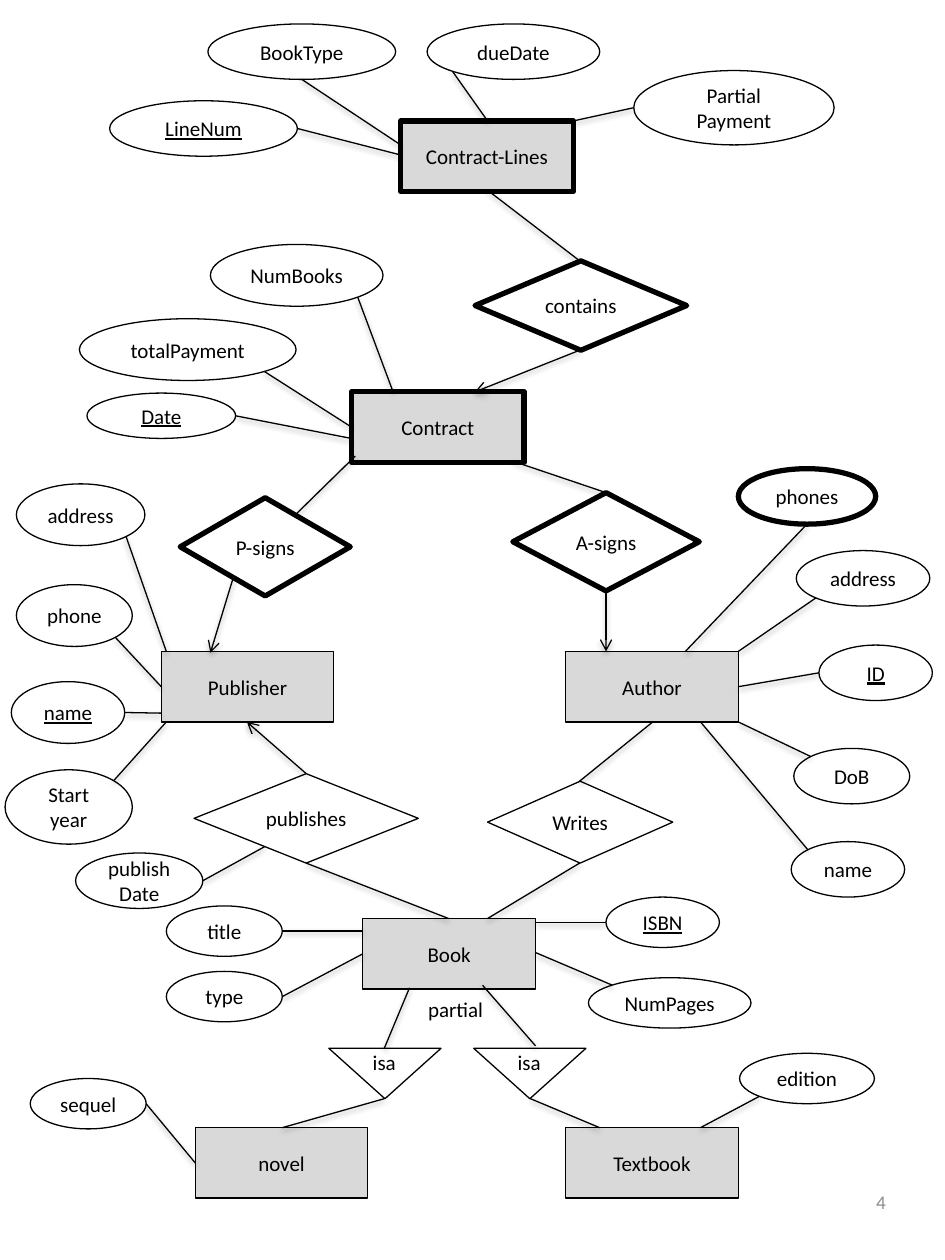
from lxml.etree import SubElement
from pptx import Presentation
from pptx.dml.color import RGBColor
from pptx.enum.shapes import MSO_CONNECTOR, MSO_SHAPE
from pptx.enum.text import MSO_ANCHOR, PP_ALIGN
from pptx.oxml.ns import qn
from pptx.util import Inches, Pt

COLORS = {"ink": "000000", "entity": "D9D9D9", "number": "8C8C8C"}
THIN, THICK = 0.75, 3
ENTITY_WIDTH, ENTITY_HEIGHT = 1.37, 0.56
DIAGONAL = 0.5 ** 1.5
SITES = {
    "left": (0, 0.5),
    "right": (1, 0.5),
    "bottom": (0.5, 1),
    "top left": (0.5 - DIAGONAL, 0.5 - DIAGONAL),
    "top right": (0.5 + DIAGONAL, 0.5 - DIAGONAL),
    "bottom left": (0.5 - DIAGONAL, 0.5 + DIAGONAL),
    "bottom right": (0.5 + DIAGONAL, 0.5 + DIAGONAL),
}
KEYS = {"underline": True}
MULTIVALUED = {"weight": THICK}

ENTITIES = [
    ("Contract-Lines", (3.18, 0.96), THICK, [
        ("BookType", (-1.53, -0.77, 1.49, 0.44), "bottom", (0, 0.19), {}),
        ("dueDate", (0.21, -0.77, 1.37, 0.44), "bottom left", (0.69, 0), {}),
        ("Partial\nPayment", (1.85, -0.4, 1.59, 0.59), "left", (1.37, 0), {}),
        ("LineNum", (-2.31, -0.16, 1.49, 0.44), "right", (0, 0.27), KEYS),
    ]),
    ("Contract", (2.79, 3.11), THICK, [
        ("NumBooks", (-1.12, -1.17, 1.37, 0.49), "bottom right", (0.33, 0), {}),
        ("totalPayment", (-2.16, -0.58, 1.72, 0.49), "bottom right", (0, 0.28), {}),
        ("Date", (-2.1, 0.01, 1.18, 0.36), "right", (0, 0.37), KEYS),
    ]),
    ("Publisher", (1.28, 5.17), THIN, [
        ("address", (-1.15, -1.33, 1.02, 0.49), "bottom right", (0.04, 0), {}),
        ("phone", (-1.15, -0.53, 0.92, 0.49), "bottom right", (0, 0.28), {}),
        ("name", (-1.19, 0.24, 0.9, 0.49), "right", (0, 0.49), KEYS),
        ("Start year", (-1.24, 0.94, 1.01, 0.59), "top right", (0.04, 0.56), {}),
    ]),
    ("Author", (4.49, 5.17), THIN, [
        ("phones", (1.37, -1.45, 1.09, 0.44), "bottom", (0.95, 0), MULTIVALUED),
        ("address", (1.83, -0.8, 1.06, 0.44), "bottom left", (1.37, 0), {}),
        ("ID", (2.01, -0.05, 0.9, 0.44), "left", (1.37, 0.28), KEYS),
        ("DoB", (1.81, 0.77, 0.92, 0.44), "top left", (1.37, 0.56), {}),
        ("name", (1.79, 1.51, 0.9, 0.44), "top left", (1.07, 0.56), {}),
    ]),
    ("Book", (2.88, 7.29), THIN, [
        ("title", (-1.56, -0.1, 0.92, 0.4), "right", (0, 0.1), {}),
        ("type", (-1.56, 0.42, 0.92, 0.4), "right", (0, 0.28), {}),
        ("ISBN", (1.93, -0.17, 0.9, 0.4), "left", (1.37, 0.03), KEYS),
        ("NumPages", (1.79, 0.47, 1.29, 0.4), "top left", (1.37, 0.27), {}),
    ]),
    ("novel", (1.55, 8.95), THIN, [
        ("sequel", (-1.31, -0.39, 0.92, 0.4), "right", (0, 0.28), {}),
    ]),
    ("Textbook", (4.49, 8.95), THIN, [
        ("edition", (1.38, -0.59, 1.07, 0.4), "bottom left", (1.07, 0), {}),
    ]),
]

RELATIONSHIPS = [
    ("contains", (3.77, 2.07, 1.68, 0.71), THICK, [
        ((0.83, 0), (0.1, -0.56), False), ((0.83, 0.71), (0, 1.04), True)], []),
    ("P-signs", (1.43, 3.95, 1.35, 0.78), THICK, [
        ((0.92, 0.13), (1.39, -0.33), False), ((0.42, 0.64), (0.24, 1.23), True)], []),
    ("A-signs", (4.07, 3.91, 1.48, 0.78), THICK, [
        ((0.74, 0), (0, -0.25), False), ((0.74, 0.78), (0.74, 1.26), True)], []),
    ("publishes", (1.54, 6.14, 1.78, 0.71), THIN, [
        ((0.89, 0), (0.42, -0.41), True), ((0.89, 0.71), (2.02, 1.15), False)], [
        ("publishDate", (-0.94, 0.63, 1.01, 0.44), "right", (0.56, 0.58), {})]),
    ("Writes", (3.87, 6.2, 1.47, 0.65), THIN, [
        ((0.73, 0), (1.31, -0.47), False), ((0.73, 0.65), (0, 1.09), False)], []),
]

SUBTYPES = [
    ((2.61, 8.32), [((0.64, -0.48), (0.44, 0)), ((0.44, 0.4), (-0.37, 0.63))]),
    ((3.76, 8.32), [((0.07, -0.5), (0.49, -0.02)), ((0.45, 0.4), (1, 0.63))]),
]


def color(name):
    """Return a named colour."""
    return RGBColor.from_string(COLORS[name])


def write_text(frame, text, alignment, size=12, ink="ink", underline=None):
    """Fill a text frame, one paragraph for each line of text."""
    frame.text = text
    for paragraph in frame.paragraphs:
        paragraph.alignment = alignment
        font = paragraph.runs[0].font
        values = {"name": "Calibri", "size": Pt(size), "underline": underline}
        for attribute, value in values.items():
            setattr(font, attribute, value)
        font.color.rgb = color(ink)


def add_node(slide, kind, box, text="", weight=THIN, fill=None, underline=None):
    """Add an outlined shape with centred text."""
    shape = slide.shapes.add_shape(kind, *map(Inches, box))
    shape.shadow.inherit = False
    if fill:
        shape.fill.solid()
        shape.fill.fore_color.rgb = color(fill)
    else:
        shape.fill.background()
    shape.line.color.rgb = color("ink")
    shape.line.width = Pt(weight)
    if text:
        shape.text_frame.vertical_anchor = MSO_ANCHOR.MIDDLE
        write_text(shape.text_frame, text, PP_ALIGN.CENTER, underline=underline)
    return shape


def add_link(slide, origin, start, end, arrow=False):
    """Join two points given relative to an origin."""
    points = [Inches(base + offset) for point in (start, end)
              for base, offset in zip(origin, point)]
    link = slide.shapes.add_connector(MSO_CONNECTOR.STRAIGHT, *points)
    link.line.color.rgb = color("ink")
    link.line.width = Pt(THIN)
    if arrow:
        SubElement(link.line._get_or_add_ln(), qn("a:tailEnd"), type="arrow")


def add_label(slide, box, text):
    """Add a short unwrapped label."""
    label = slide.shapes.add_textbox(*map(Inches, box))
    label.text_frame.word_wrap = False
    write_text(label.text_frame, text, PP_ALIGN.LEFT)


def add_attributes(slide, origin, attributes):
    """Place attribute ellipses around an origin and link them to their owner."""
    for text, (left, top, width, height), site, end, style in attributes:
        box = (origin[0] + left, origin[1] + top, width, height)
        add_node(slide, MSO_SHAPE.OVAL, box, text, **style)
        across, down = SITES[site]
        add_link(slide, origin, (left + across * width, top + down * height), end)


def add_entity(slide, origin, name, weight, attributes):
    """Draw an entity with its attributes."""
    box = (*origin, ENTITY_WIDTH, ENTITY_HEIGHT)
    add_node(slide, MSO_SHAPE.RECTANGLE, box, name, weight, "entity")
    add_attributes(slide, origin, attributes)


def add_relationship(slide, box, name, weight, links, attributes):
    """Draw a relationship diamond with its links and attributes."""
    add_node(slide, MSO_SHAPE.DIAMOND, box, name, weight)
    for start, end, arrow in links:
        add_link(slide, box[:2], start, end, arrow)
    add_attributes(slide, box[:2], attributes)


def add_subtype(slide, origin, links):
    """Draw an isa triangle with its links."""
    left, top = origin
    triangle = add_node(slide, MSO_SHAPE.ISOSCELES_TRIANGLE, (left, top, 0.89, 0.4))
    triangle.rotation = 180
    add_label(slide, (left + 0.25, top - 0.04, 0.39, 0.3), "isa")
    for start, end in links:
        add_link(slide, origin, start, end)


def add_slide_number(slide, box, text):
    """Write the slide number at the right of its box."""
    frame = slide.shapes.add_textbox(*map(Inches, box)).text_frame
    frame.word_wrap = True
    frame.vertical_anchor = MSO_ANCHOR.MIDDLE
    write_text(frame, text, PP_ALIGN.RIGHT, size=11, ink="number")


def main():
    """Build the entity relationship diagram."""
    presentation = Presentation()
    presentation.slide_width = Inches(7.5)
    presentation.slide_height = Inches(10)
    slide = presentation.slides.add_slide(presentation.slide_layouts[6])
    for name, origin, weight, attributes in ENTITIES:
        add_entity(slide, origin, name, weight, attributes)
    for name, box, weight, links, attributes in RELATIONSHIPS:
        add_relationship(slide, box, name, weight, links, attributes)
    for origin, links in SUBTYPES:
        add_subtype(slide, origin, links)
    add_label(slide, (3.3, 7.86, 0.64, 0.3), "partial")
    add_slide_number(slide, (5.38, 9.27, 1.75, 0.53), "4")
    presentation.save("out.pptx")


if __name__ == "__main__":
    main()
